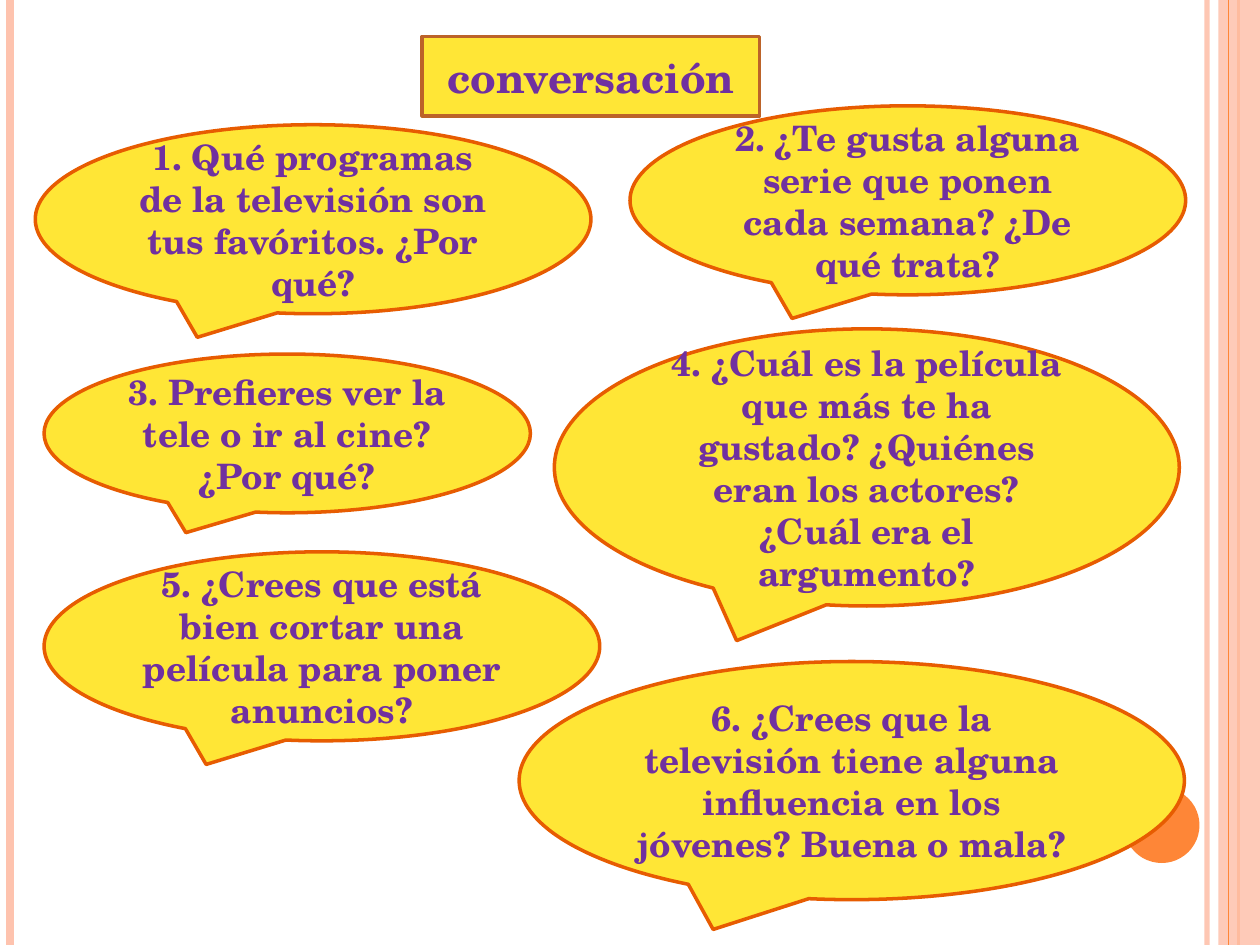
from dataclasses import dataclass

from lxml.etree import SubElement
from pptx import Presentation
from pptx.dml.color import RGBColor
from pptx.enum.shapes import MSO_CONNECTOR, MSO_SHAPE
from pptx.enum.text import MSO_ANCHOR, MSO_AUTO_SIZE, PP_ALIGN
from pptx.oxml.ns import qn
from pptx.util import Inches, Pt


@dataclass(frozen=True)
class Theme:
    font: str = "TeX Gyre Schola"
    ink: str = "7030A0"
    fill: str = "FFE636"
    edge: str = "E75C01"
    frame: str = "BC6329"
    pale: str = "FEC3AE"
    bright: str = "FE8637"
    head: int = 24
    body: int = 20
    line: int = 2


THEME = Theme()
WIDE, HIGH = Inches(10), Inches(7.5)

# Left, top, width, height as percent of the slide, then the question
ASKS = [
    (2.8, 13.2, 44.1, 20, "1. Qué programas de la televisión son tus favóritos. ¿Por qué?"),
    (50, 11.2, 44.1, 20, "2. ¿Te gusta alguna serie que ponen cada semana? ¿De qué trata?"),
    (3.5, 37.47, 38.6, 16.8, "3. Prefieres ver la tele o ir al cine? ¿Por qué?"),
    (44, 34.8, 49.6, 29.33, "4. ¿Cuál es la película que más te ha gustado? "
     "¿Quiénes eran los actores? ¿Cuál era el argumento?"),
    (3.5, 58.4, 44.1, 20, "5. ¿Crees que está bien cortar una película para poner anuncios?"),
    (41.2, 70, 52.8, 25.2, "6. ¿Crees que la televisión tiene alguna influencia "
     "en los jóvenes? Buena o mala?"),
]


def place(x, y, w, h):
    """Turn percent shares into slide lengths."""
    return [round(part * side / 100) for part, side in zip((x, y, w, h), (WIDE, HIGH) * 2)]


def paint(shape, fill, edge=None):
    shape.fill.solid()
    shape.fill.fore_color.rgb = RGBColor.from_string(fill)
    if edge:
        shape.line.color.rgb = RGBColor.from_string(edge)
        shape.line.width = Pt(THEME.line)
    else:
        shape.line.fill.background()


def fade(shape, share):
    """Set the opacity, in percent, of the shape's first colour."""
    color = next(shape.element.spPr.iter(qn("a:srgbClr")))
    SubElement(color, qn("a:alpha"), val=str(share * 1000))


def write(shape, text, size):
    frame = shape.text_frame
    frame.text = text
    frame.word_wrap = True
    frame.auto_size = MSO_AUTO_SIZE.NONE
    frame.vertical_anchor = MSO_ANCHOR.MIDDLE
    para = frame.paragraphs[0]
    para.alignment = PP_ALIGN.CENTER
    font = para.runs[0].font
    font.name, font.size, font.bold = THEME.font, Pt(size), True
    font.color.rgb = RGBColor.from_string(THEME.ink)


def add_form(slide, kind, box, fill, edge=None):
    shape = slide.shapes.add_shape(kind, *place(*box))
    shape.shadow.inherit = False
    paint(shape, fill, edge)
    return shape


def add_stripe(slide, x, color, width):
    """Draw a line down the full height of the slide."""
    left, top, _, end = place(x, 0, 0, 100)
    stripe = slide.shapes.add_connector(MSO_CONNECTOR.STRAIGHT, left, top, left, end)
    stripe.line.color.rgb = RGBColor.from_string(color)
    stripe.line.width = Pt(width)
    SubElement(stripe.element.spPr, qn("a:effectLst"))
    return stripe


def add_edges(slide):
    fade(add_stripe(slide, 95.8, THEME.pale, 3), 93)
    add_stripe(slide, 0.8, THEME.pale, 4.5)
    add_stripe(slide, 98.3, THEME.bright, 1.5)
    fade(add_form(slide, MSO_SHAPE.RECTANGLE, (96.7, 0, 3.3, 100), THEME.pale), 87)
    add_stripe(slide, 97.5, THEME.bright, 0.75)
    add_form(slide, MSO_SHAPE.OVAL, (89.2, 83.33, 6, 8), THEME.bright)


def set_title(slide, text):
    title = slide.shapes.title
    title.left, title.top, title.width, title.height = place(33.5, 3.87, 26.8, 8.4)
    # Rounded outline for the placeholder
    geom = SubElement(title.element.spPr, qn("a:prstGeom"), prst="roundRect")
    SubElement(geom, qn("a:avLst"))
    paint(title, THEME.fill, THEME.frame)
    write(title, text, THEME.head)


def add_ask(slide, box, text):
    ask = add_form(slide, MSO_SHAPE.OVAL_CALLOUT, box, THEME.fill, THEME.edge)
    write(ask, text, THEME.body)


def main():
    deck = Presentation()
    deck.slide_width, deck.slide_height = WIDE, HIGH
    slide = deck.slides.add_slide(deck.slide_layouts[5])
    add_edges(slide)
    set_title(slide, "conversación")
    for *box, text in ASKS:
        add_ask(slide, box, text)
    deck.save("out.pptx")


if __name__ == "__main__":
    main()
